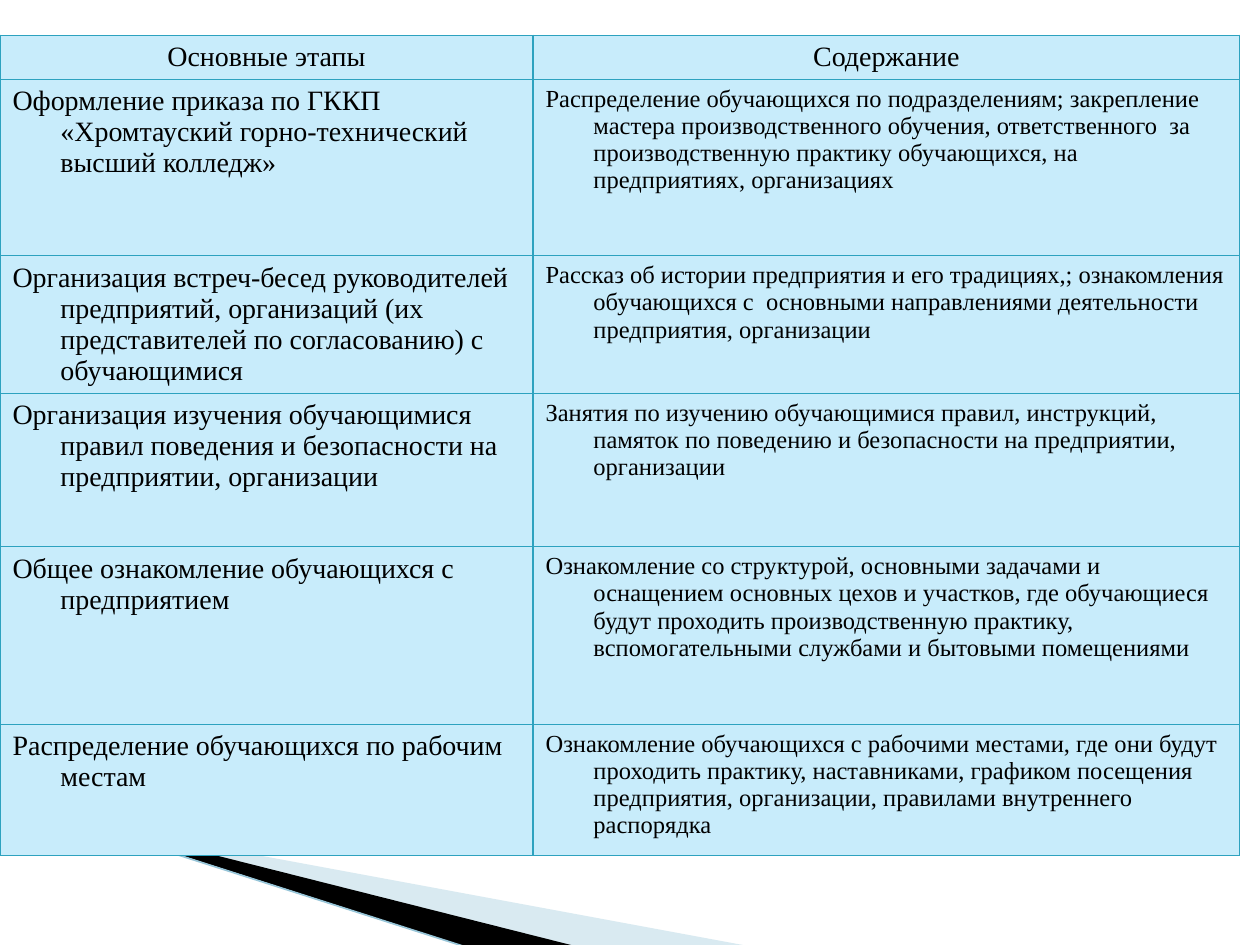
from dataclasses import dataclass

from lxml.etree import SubElement
from pptx import Presentation
from pptx.dml.color import RGBColor
from pptx.enum.shapes import MSO_CONNECTOR
from pptx.enum.text import PP_ALIGN
from pptx.oxml.ns import qn
from pptx.util import Inches, Pt


@dataclass(frozen=True)
class Theme:
    """Colours, type sizes and font of the slide."""
    font: str = "Times New Roman"
    text: str = "000000"
    cell: str = "C8ECFB"
    border: str = "2DA2BF"
    pale_wedge: str = "A0CBDC"
    dark_wedge: str = "000000"
    edge: str = "97C5D8"
    stage_size: int = 16
    content_size: int = 14
    border_width: float = 0.75
    edge_width: float = 0.95


THEME = Theme()
HEADINGS = ("Основные этапы", "Содержание")
STAGES = [
    ("Оформление приказа по ГККП «Хромтауский горно-технический высший колледж»",
     "Распределение обучающихся по подразделениям; закрепление  мастера производственного обучения, "
     "ответственного  за производственную практику обучающихся, на предприятиях, организациях"),
    ("Организация встреч-бесед руководителей  предприятий, организаций "
     "(их представителей по согласованию) с обучающимися",
     "Рассказ об истории предприятия и его традициях,; ознакомления обучающихся с  основными "
     "направлениями деятельности предприятия, организации"),
    ("Организация изучения обучающимися правил поведения и безопасности на предприятии, организации",
     "Занятия по изучению обучающимися правил, инструкций, памяток по поведению и безопасности "
     "на предприятии, организации"),
    ("Общее ознакомление обучающихся с предприятием",
     "Ознакомление со структурой, основными задачами и оснащением основных цехов и участков, "
     "где обучающиеся будут проходить производственную практику, вспомогательными службами "
     "и бытовыми помещениями"),
    ("Распределение обучающихся по рабочим местам",
     "Ознакомление обучающихся с рабочими местами, где они будут проходить практику, наставниками, "
     "графиком посещения предприятия, организации, правилами внутреннего распорядка"),
]
COLUMN_WIDTHS = (4.23, 5.61)
ROW_HEIGHTS = (0.35, 1.4, 1.09, 1.22, 1.41, 1.04)


def write_text(text_frame, text, *, size, align=PP_ALIGN.LEFT, hanging=0.38):
    """Write one paragraph with a hanging indent."""
    paragraph = text_frame.paragraphs[0]
    paragraph.alignment = align
    properties = paragraph._p.get_or_add_pPr()
    properties.set("marL", str(Inches(hanging)))
    properties.set("indent", str(-Inches(hanging)))
    run = paragraph.add_run()
    run.text = text
    run.font.name = THEME.font
    run.font.size = Pt(size)
    run.font.color.rgb = RGBColor.from_string(THEME.text)


def set_borders(cell):
    """Draw a thin line on all four sides of a cell."""
    properties = cell._tc.get_or_add_tcPr()
    for position, side in enumerate(("a:lnL", "a:lnR", "a:lnT", "a:lnB")):
        line = SubElement(properties, qn(side), w=str(Pt(THEME.border_width)))
        fill = SubElement(line, qn("a:solidFill"))
        SubElement(fill, qn("a:srgbClr"), val=THEME.border)
        properties.insert(position, line)


def add_wedge(slide, points, color, opacity=100):
    """Add a filled polygon without an outline."""
    start, *others = [(Inches(x), Inches(y)) for x, y in points]
    builder = slide.shapes.build_freeform(*start)
    builder.add_line_segments(others, close=True)
    shape = builder.convert_to_shape()
    shape.shadow.inherit = False
    shape.line.fill.background()
    shape.fill.solid()
    shape.fill.fore_color.rgb = RGBColor.from_string(color)
    if opacity < 100:
        color_element = shape._element.spPr.find(".//" + qn("a:srgbClr"))
        SubElement(color_element, qn("a:alpha"), val=str(opacity * 1000))


def add_edge(slide, start, end):
    """Add a straight line without a shadow."""
    connector = slide.shapes.add_connector(
        MSO_CONNECTOR.STRAIGHT, *(Inches(value) for value in (*start, *end)))
    connector.line.color.rgb = RGBColor.from_string(THEME.edge)
    connector.line.width = Pt(THEME.edge_width)
    SubElement(connector._element.spPr, qn("a:effectLst"))


def add_stage_table(slide, left, top):
    """Add the table of stages and their content."""
    rows = [HEADINGS, *STAGES]
    table = slide.shapes.add_table(
        len(rows), len(HEADINGS), Inches(left), Inches(top),
        Inches(sum(COLUMN_WIDTHS)), Inches(sum(ROW_HEIGHTS))).table
    for column, width in zip(table.columns, COLUMN_WIDTHS):
        column.width = Inches(width)
    for row, height in zip(table.rows, ROW_HEIGHTS):
        row.height = Inches(height)
    for row_index, texts in enumerate(rows):
        is_heading = row_index == 0
        for column_index, text in enumerate(texts):
            cell = table.cell(row_index, column_index)
            cell.fill.solid()
            cell.fill.fore_color.rgb = RGBColor.from_string(THEME.cell)
            set_borders(cell)
            is_large = is_heading or column_index == 0
            write_text(cell.text_frame, text,
                       size=THEME.stage_size if is_large else THEME.content_size,
                       align=PP_ALIGN.CENTER if is_heading else PP_ALIGN.LEFT)


def main():
    """Build and save the slide."""
    presentation = Presentation()
    presentation.slide_width = Inches(10)
    presentation.slide_height = Inches(7.5)
    slide = presentation.slides.add_slide(presentation.slide_layouts[6])
    add_wedge(slide, [(0.55, 6.51), (5.95, 7.51), (4.56, 7.51), (0.55, 6.5)],
              THEME.pale_wedge, opacity=40)
    add_wedge(slide, [(0.53, 6.49), (4.57, 7.51), (3.72, 7.52), (0.54, 6.5)],
              THEME.dark_wedge)
    add_edge(slide, (-0.01, 6.33), (3.71, 7.52))
    add_stage_table(slide, 0, 0.28)
    presentation.save("out.pptx")


if __name__ == "__main__":
    main()
